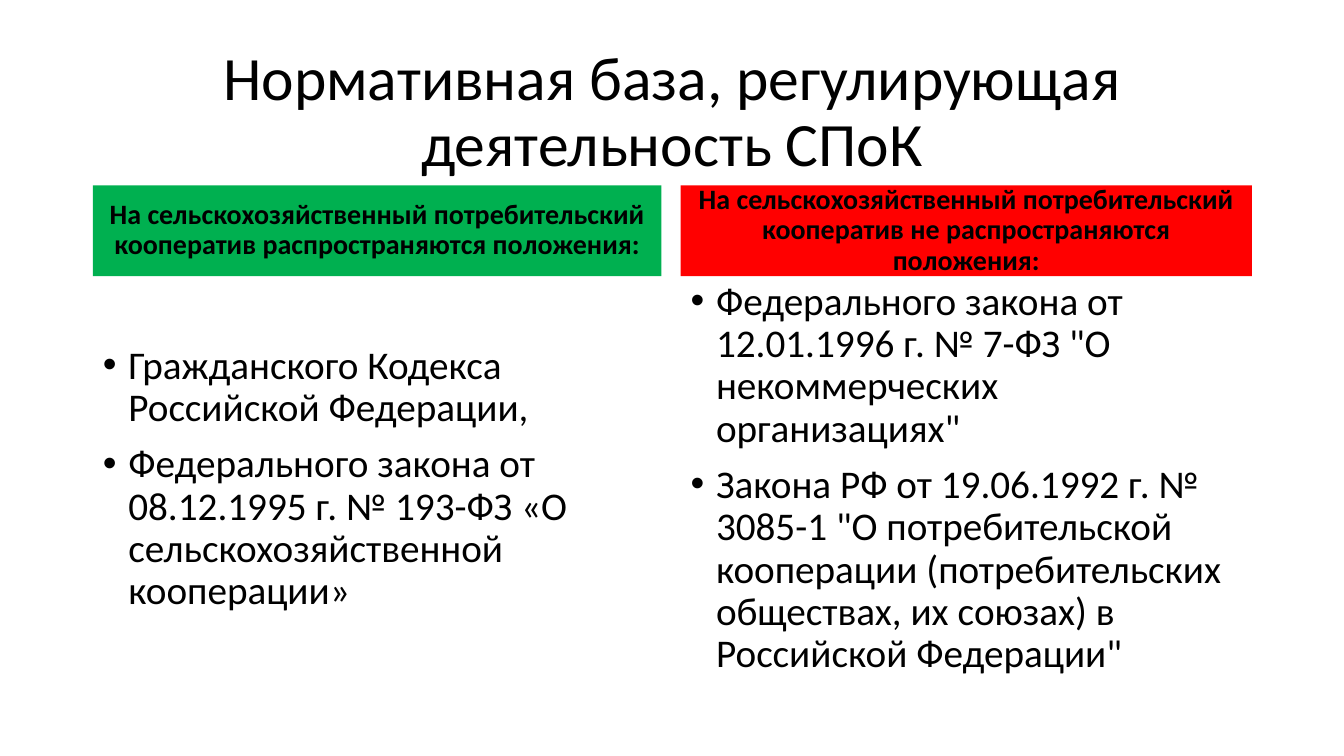
import pptx
import pptx.dml.color
import pptx.enum.text
import pptx.oxml
import pptx.util
from pptx.util import Cm

BLACK = pptx.dml.color.RGBColor(0x00, 0x00, 0x00)
GREEN = pptx.dml.color.RGBColor(0x00, 0xB0, 0x50)
RED = pptx.dml.color.RGBColor(0xFF, 0x00, 0x00)
TOP = pptx.enum.text.MSO_ANCHOR.TOP
MIDDLE = pptx.enum.text.MSO_ANCHOR.MIDDLE
CENTER = pptx.enum.text.PP_ALIGN.CENTER
LEFT = pptx.enum.text.PP_ALIGN.LEFT
HEADING_HEIGHT = Cm(2.29)
BULLET_INDENT = Cm(0.64)

APPLIES = [
    "Гражданского Кодекса Российской Федерации,",
    "Федерального закона от 08.12.1995 г. № 193-ФЗ «О сельскохозяйственной кооперации»",
]
DOES_NOT_APPLY = [
    'Федерального закона от 12.01.1996 г. № 7-ФЗ "О некоммерческих организациях"',
    'Закона РФ от 19.06.1992 г. № 3085-1 "О потребительской кооперации '
    '(потребительских обществах, их союзах) в Российской Федерации"',
]


def fill_placeholder(holder, box, lines, size, anchor=MIDDLE, align=CENTER, bold=False, before=10):
    """Move a placeholder into its box and set its formatted paragraphs."""
    holder.left, holder.top, holder.width, holder.height = box
    frame = holder.text_frame
    frame.text = "\n".join(lines)
    frame.word_wrap = True
    frame.auto_size = pptx.enum.text.MSO_AUTO_SIZE.NONE
    frame.vertical_anchor = anchor
    for paragraph in frame.paragraphs:
        paragraph.alignment = align
        paragraph.line_spacing = 0.9
        paragraph.space_before = pptx.util.Pt(before)
        paragraph.font.name = "Calibri"
        paragraph.font.size = pptx.util.Pt(size)
        paragraph.font.bold = bold
        paragraph.font.color.rgb = BLACK


def add_bullets(holder):
    """Give every paragraph of a list a round bullet and a hanging indent."""
    for paragraph in holder.text_frame.paragraphs:
        properties = paragraph._p.get_or_add_pPr()
        properties.set("marL", str(BULLET_INDENT))
        properties.set("indent", str(-BULLET_INDENT))
        namespace = 'xmlns:a="http://schemas.openxmlformats.org/drawingml/2006/main"'
        bullet_parts = [
            pptx.oxml.parse_xml(f'<a:buFont {namespace} typeface="Arial"/>'),
            pptx.oxml.parse_xml(f'<a:buChar {namespace} char="•"/>'),
        ]
        run_defaults = properties.find(pptx.oxml.ns.qn("a:defRPr"))
        for part in bullet_parts:
            run_defaults.addprevious(part)


def build_column(heading, provisions, box, title, color, laws, anchor):
    """Place a coloured heading with its list of laws below it."""
    left, top, width, height = box
    fill_placeholder(heading, (left, top, width, HEADING_HEIGHT), [title], 20, bold=True)
    heading.fill.solid()
    heading.fill.fore_color.rgb = color
    list_box = (left, top + HEADING_HEIGHT, width, height - HEADING_HEIGHT)
    fill_placeholder(provisions, list_box, laws, 28, anchor, LEFT)
    add_bullets(provisions)


def build_comparison(presentation):
    """Add the slide comparing laws that apply with laws that do not."""
    slide = presentation.slides.add_slide(presentation.slide_layouts[4])
    title, applies_heading, applies_list, excluded_heading, excluded_list = slide.placeholders
    fill_placeholder(title, (Cm(2.34), Cm(1.02), Cm(29.21), Cm(3.68)),
                     ["Нормативная база, регулирующая деятельность СПоК"], 44, before=0)
    build_column(applies_heading, applies_list, (Cm(2.34), Cm(4.67), Cm(14.33), Cm(12.53)),
                 "На сельскохозяйственный потребительский кооператив распространяются положения:",
                 GREEN, APPLIES, MIDDLE)
    build_column(excluded_heading, excluded_list, (Cm(17.15), Cm(4.67), Cm(14.4), Cm(12.53)),
                 "На сельскохозяйственный потребительский кооператив не распространяются положения:",
                 RED, DOES_NOT_APPLY, TOP)


def main():
    """Build and save the presentation."""
    presentation = pptx.Presentation()
    presentation.slide_width, presentation.slide_height = Cm(33.87), Cm(19.05)
    build_comparison(presentation)
    presentation.save("out.pptx")


if __name__ == "__main__":
    main()
